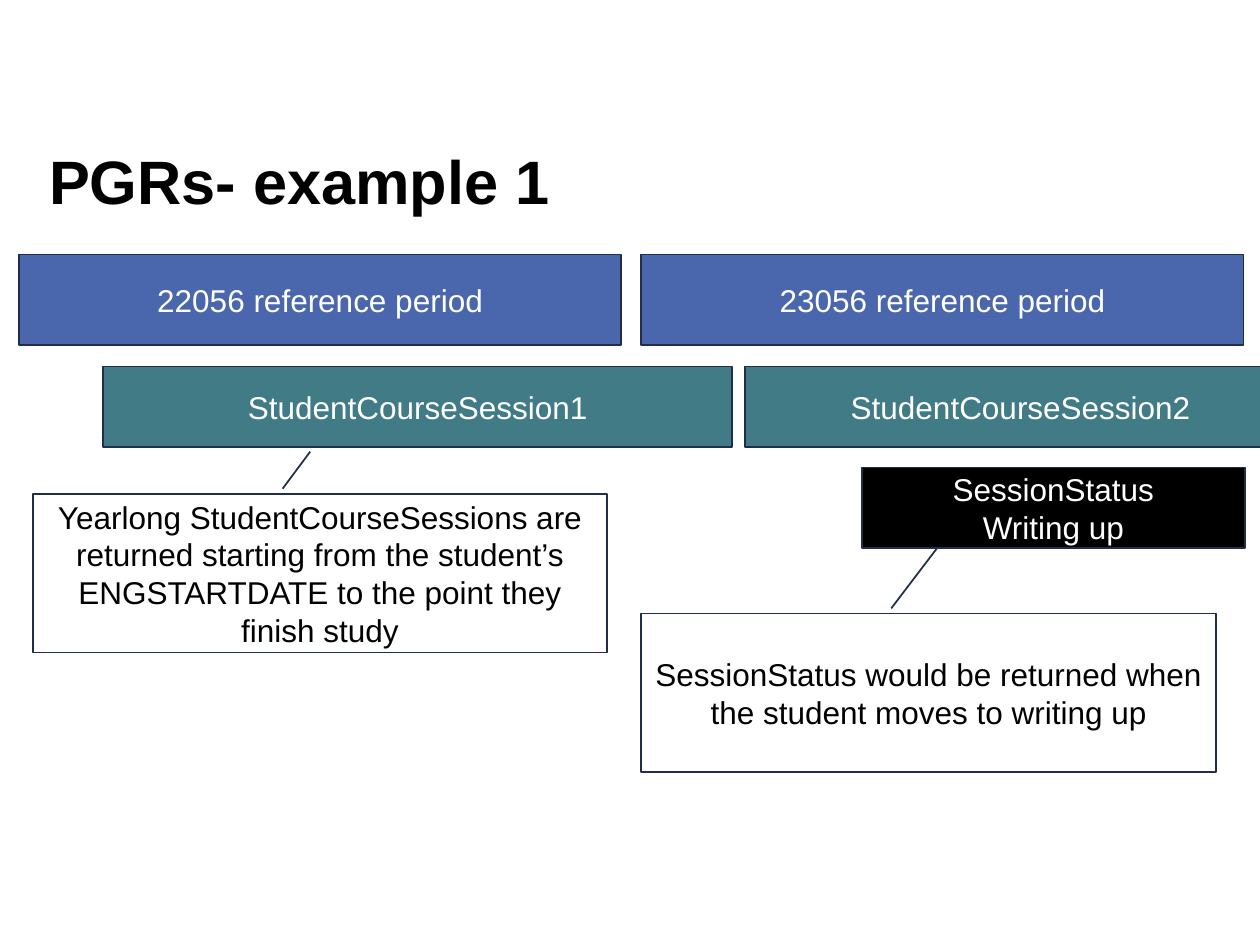
from pptx import Presentation
from pptx.dml.color import RGBColor
from pptx.enum.shapes import MSO_SHAPE
from pptx.enum.text import MSO_ANCHOR, PP_ALIGN
from pptx.util import Inches, Pt

RECT, CALLOUT = MSO_SHAPE.RECTANGLE, MSO_SHAPE.LINE_CALLOUT_1
TOP, MIDDLE = MSO_ANCHOR.TOP, MSO_ANCHOR.MIDDLE
CENTER = PP_ALIGN.CENTER

FONT = "Arial"
BLACK, WHITE = "000000", "FFFFFF"
BLUE, TEAL, OUTLINE = "4A66AC", "417B85", "202D4B"


def color(hex_code):
    return RGBColor.from_string(hex_code)


def add_run(p, text, size, hex_code, bold=False):
    r = p.add_run()
    r.text = text
    r.font.name = FONT
    r.font.size = Pt(size)
    r.font.bold = bold
    r.font.color.rgb = color(hex_code)


def add_title(slide, text):
    box = slide.shapes.add_textbox(Inches(0.39), Inches(1.08), Inches(9.21), Inches(0.95))
    tf = box.text_frame
    tf.word_wrap = True
    tf.vertical_anchor = TOP
    tf.margin_left = tf.margin_right = tf.margin_top = tf.margin_bottom = 0
    p = tf.paragraphs[0]
    p.line_spacing = Pt(46)
    add_run(p, text, 35, BLACK, bold=True)


def add_box(slide, kind, left, top, width, height, lines, text_color):
    sp = slide.shapes.add_shape(kind, Inches(left), Inches(top), Inches(width), Inches(height))
    sp.shadow.inherit = False
    sp.line.color.rgb = color(OUTLINE)
    sp.line.width = Pt(1)
    tf = sp.text_frame
    tf.word_wrap = True
    tf.vertical_anchor = MIDDLE
    for i, line in enumerate(lines):
        p = tf.add_paragraph() if i else tf.paragraphs[0]
        p.alignment = CENTER
        add_run(p, line, 18, text_color)
    return sp


def add_bar(slide, left, top, width, height, fill, *lines):
    sp = add_box(slide, RECT, left, top, width, height, lines, WHITE)
    sp.fill.solid()
    sp.fill.fore_color.rgb = color(fill)


def add_callout(slide, left, top, text, tip_y, tip_x):
    sp = add_box(slide, CALLOUT, left, top, 4.56, 1.26, [text], BLACK)
    sp.fill.background()
    # Leader line: start (y, x), then tip (y, x), as fractions of the box
    for i, value in enumerate((-0.033, 0.435, tip_y, tip_x)):
        sp.adjustments[i] = value


def main():
    prs = Presentation()
    prs.slide_width, prs.slide_height = Inches(10), Inches(7.5)
    slide = prs.slides.add_slide(prs.slide_layouts[6])

    add_title(slide, "PGRs- example 1")

    # Student course sessions
    for number, left, width in ((1, 0.82, 4.99), (2, 5.91, 4.38)):
        add_bar(slide, left, 2.91, width, 0.64, TEAL, f"StudentCourseSession{number}")

    # Session status and explanatory callouts
    add_callout(slide, 0.26, 3.92,
                "Yearlong StudentCourseSessions are returned starting from the "
                "student’s ENGSTARTDATE to the point they finish study", -0.266, 0.483)
    add_bar(slide, 6.84, 3.71, 3.04, 0.64, BLACK, "SessionStatus", "Writing up")
    add_callout(slide, 5.09, 4.87,
                "SessionStatus would be returned when the student moves to writing up",
                -0.418, 0.516)

    # Reference periods
    for period, left in (("22056", 0.15), ("23056", 5.09)):
        add_bar(slide, left, 2.02, 4.78, 0.72, BLUE, f"{period} reference period")

    prs.save("out.pptx")


if __name__ == "__main__":
    main()
